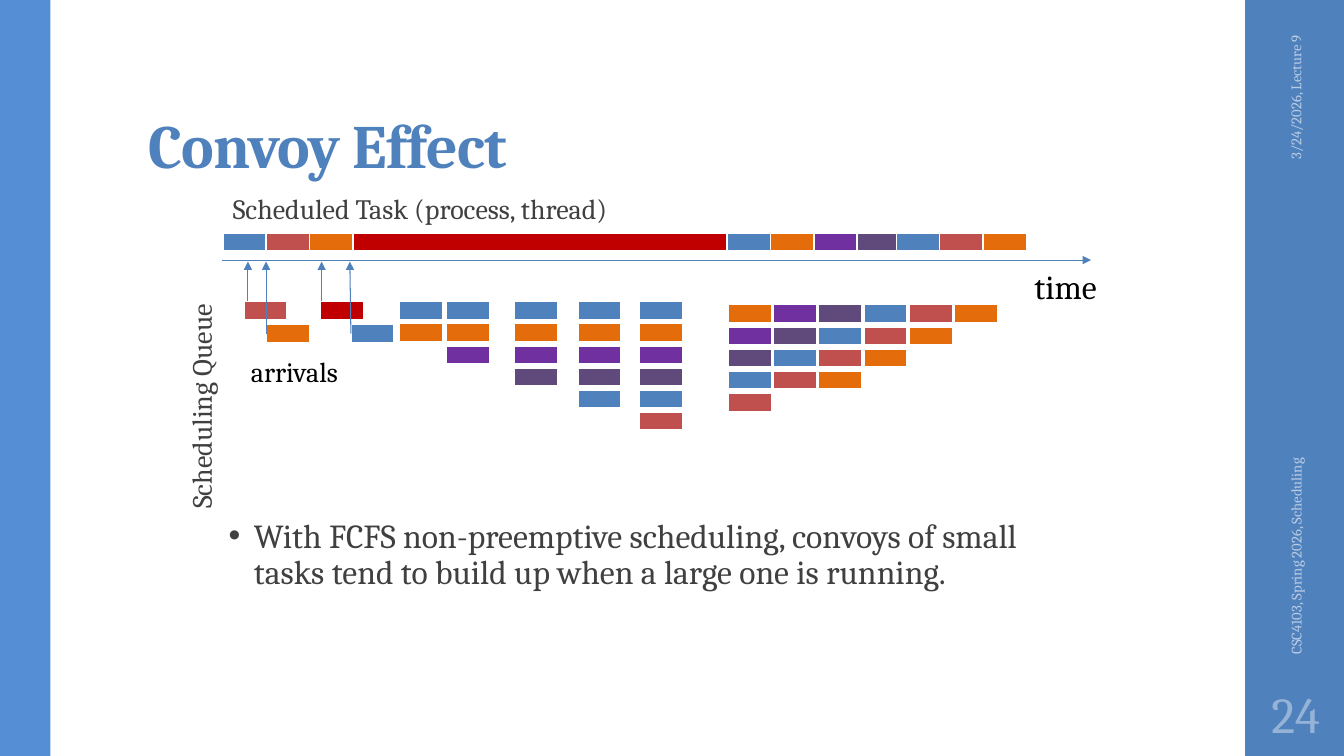
"""Build the slide on the convoy effect in first-come, first-served scheduling."""
from lxml import etree
from pptx import Presentation
from pptx import util as u
from pptx.dml.color import RGBColor
from pptx.enum import shapes, text
from pptx.oxml import ns

deck = Presentation()
deck.slide_width, deck.slide_height = u.Inches(13.33), u.Inches(7.5)
slide = deck.slides.add_slide(deck.slide_layouts[6])
col, row = deck.slide_width / 100, deck.slide_height / 100
BLUE = "4F81BD"
TONES = {"B": BLUE, "R": "C0504D", "O": "E46C0A", "P": "7030A0",
         "V": "604A7B", "D": "C00000"}
WIDE, HIGH, STEP = 3.23, 2.4, 2.93
MID, TOP = text.MSO_ANCHOR.MIDDLE, text.MSO_ANCHOR.TOP
LEFT, RIGHT, CENTER = text.PP_ALIGN.LEFT, text.PP_ALIGN.RIGHT, text.PP_ALIGN.CENTER


def paint(form, tone):
    """Give a fill, line or font one solid colour."""
    if hasattr(form, "solid"):
        form.solid()
        form.fore_color.rgb = RGBColor.from_string(tone)
    else:
        form.color.rgb = RGBColor.from_string(tone)


def block(x, y, wide, high, tone, edge=True):
    """Draw a filled rectangle placed in columns and rows."""
    rect = slide.shapes.add_shape(
        shapes.MSO_SHAPE.RECTANGLE, int(x * col), int(y * row), int(wide * col), int(high * row))
    rect.shadow.inherit = False
    paint(rect.fill, tone)
    if edge:
        paint(rect.line, "FFFFFF")
        rect.line.width = u.Pt(1.1)
    else:
        rect.line.fill.background()
    return rect


block(92.65, 0, 7.35, 100, BLUE, False)
block(0, 0, 3.75, 100, "558ED5", False)

for x, tasks in ((16.58, "BRO"), (54.09, "BOPV"), (66.69, "BRO")):
    for i, task in enumerate(tasks):
        block(x + i * WIDE, 30.8, WIDE, HIGH, TONES[task])
block(26.26, 30.8, 27.83, HIGH, TONES["D"])

grow = [(29.71, "BO"), (33.23, "BOP"), (38.26, "BOPV"), (42.99, "BOPVB"), (47.56, "BOPVBR")]
drain = ["OPVBR", "PVBR", "VBRO", "BRO", "RO", "O"]
queues = [(x, 39.87, tasks) for x, tasks in grow]
queues += [(54.16 + i * 3.37, 40.3, tasks) for i, tasks in enumerate(drain)]
for x, y, tasks in queues:
    for i, task in enumerate(tasks):
        block(x, y + i * STEP, WIDE, HIGH, TONES[task])

arrows = [(16.5, 34.4, 81.17, 34.4, None)]
for x, y, task, tip, joined in (
        (18.15, 39.87, "R", 18.45, False), (19.8, 42.93, "O", 19.8, True),
        (23.86, 39.87, "D", 23.93, False), (26.11, 42.93, "B", 26.03, True)):
    rect = block(x, y, WIDE, HIGH, TONES[task])
    arrows.append((tip, y, tip, 34.6, rect if joined else None))

for x1, y1, x2, y2, rect in arrows:
    line = slide.shapes.add_connector(
        shapes.MSO_CONNECTOR.STRAIGHT, int(x1 * col), int(y1 * row), int(x2 * col), int(y2 * row))
    if rect is not None:
        line.begin_connect(rect, 1)
    paint(line.line, BLUE)
    line.line.width = u.Pt(0.75)
    props = line._element.spPr
    etree.SubElement(props.find(ns.qn("a:ln")), ns.qn("a:tailEnd"), type="triangle")
    etree.SubElement(props, ns.qn("a:effectLst"))

labels = [
    ("Convoy Effect", 10.35, 4.27, 79.52, 20.4, 44, BLUE, 0, text.MSO_ANCHOR.BOTTOM, LEFT),
    ("3/24/2026, Lecture 9", 88.6, 14.53, 15.6, 5.33, 10.5, "B9CDE5", 270, MID, RIGHT),
    ("CSC4103, Spring 2026, Scheduling", 81.7, 59.07, 29.41, 5.33, 10.5, "B9CDE5", 270, MID, LEFT),
    ("24", 92.65, 90, 7.5, 8.67, 36, "95B3D7", 0, MID, CENTER),
    ("With FCFS non-preemptive scheduling, convoys of small tasks tend to build up "
     "when a large one is running.", 16.28, 68, 64.67, 23.6, 24, "404040", 0, TOP, LEFT),
    ("time", 76.22, 34.53, 6.83, 6.67, 24, "000000", 0, TOP, LEFT),
    ("Scheduling Queue", 5.33, 48.53, 19.28, 5.87, 20, "404040", 270, TOP, LEFT),
    ("Scheduled Task (process, thread)", 16.58, 24.67, 33.53, 5.87, 20, "404040", 0, TOP, LEFT),
    ("arrivals", 17.93, 46.27, 9.15, 5.87, 20, "000000", 0, TOP, LEFT),
]
for words, x, y, wide, high, size, tone, turn, anchor, align in labels:
    box = slide.shapes.add_textbox(int(x * col), int(y * row), int(wide * col), int(high * row))
    box.rotation = turn
    frame = box.text_frame
    frame.word_wrap = True
    frame.vertical_anchor = anchor
    frame.text = words
    para = frame.paragraphs[0]
    para.alignment = align
    run = para.runs[0]
    run.font.name, run.font.size = "Cambria", u.Pt(size)
    paint(run.font, tone)
    if words == "Convoy Effect":
        frame.margin_top = u.Inches(0.03)
        para.line_spacing = 0.9
        run.font.bold = True
        run._r.get_or_add_rPr().set("spc", "-50")
    elif words == "24":
        frame.margin_left = frame.margin_right = u.Inches(0.05)
    elif words.startswith("With"):
        para.line_spacing = 0.9
        props = para._p.get_or_add_pPr()
        props.set("marL", str(u.Inches(0.25)))
        props.set("indent", str(-u.Inches(0.25)))
        etree.SubElement(props, ns.qn("a:buFont"), typeface="Arial")
        etree.SubElement(props, ns.qn("a:buChar"), char="•")

deck.save("out.pptx")
